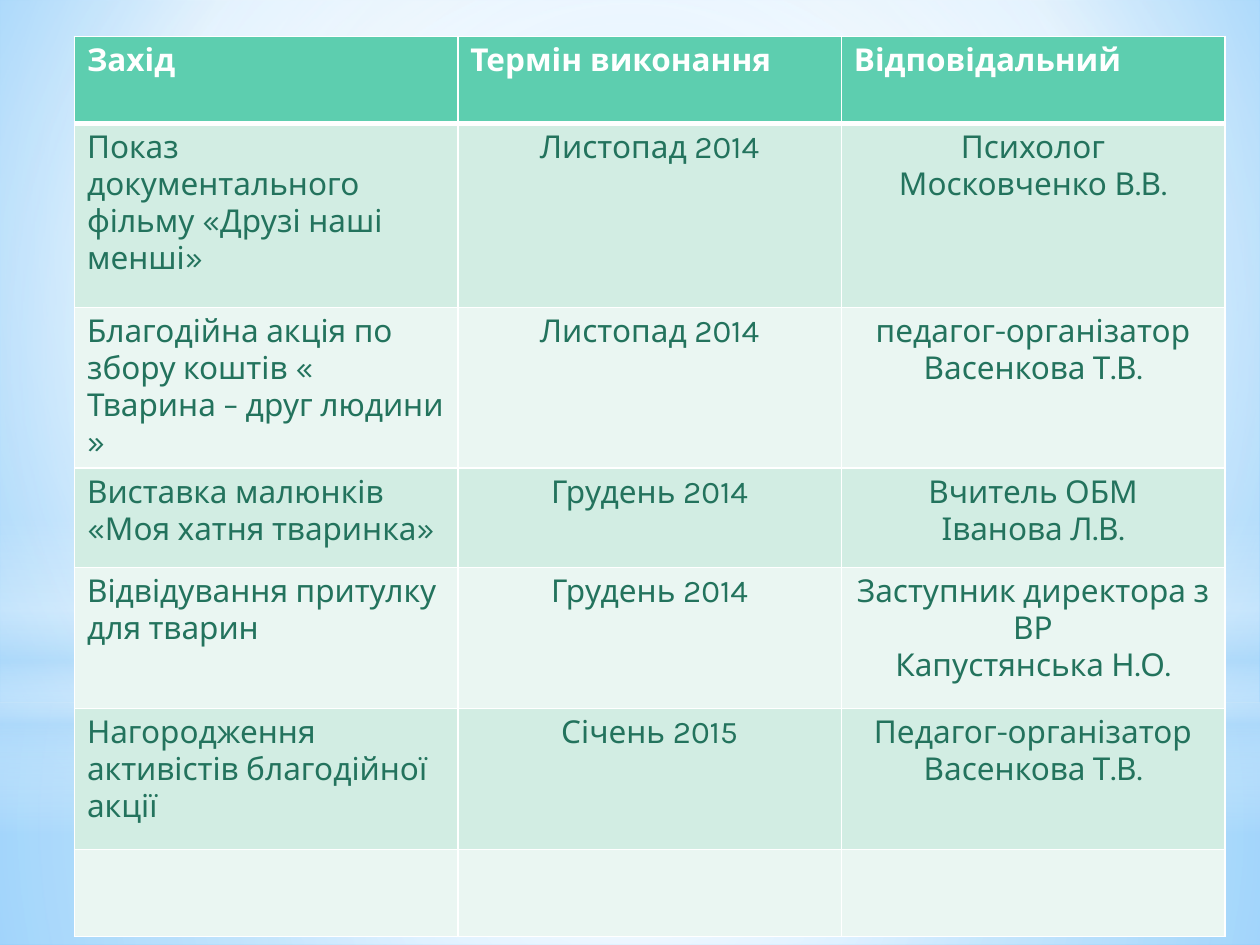
import pptx
from lxml import etree
from pptx.dml.color import RGBColor
from pptx.enum.shapes import MSO_SHAPE
from pptx.enum.text import PP_ALIGN
from pptx.oxml.ns import qn
from pptx.util import Cm, Pt

# Content: each cell is a list of paragraphs
HEADER = ["Захід", "Термін виконання", "Відповідальний"]
EVENTS = [
    (["Показ документального фільму «Друзі наші менші»"], ["Листопад 2014"],
     ["Психолог", "Московченко В.В."]),
    (["Благодійна акція по збору коштів « Тварина – друг людини »"], ["Листопад 2014"],
     ["педагог-організатор", "Васенкова Т.В."]),
    (["Виставка малюнків «Моя хатня тваринка»"], ["Грудень 2014"],
     ["Вчитель ОБМ", "Іванова Л.В."]),
    (["Відвідування притулку для тварин"], ["Грудень 2014"],
     ["Заступник директора з ВР", "Капустянська Н.О."]),
    (["Нагородження активістів благодійної акції"], ["Січень 2015"],
     ["Педагог-організатор", "Васенкова Т.В."]),
    ([], [], []),
]
ROW_HEIGHTS = [1.75, 3.71, 2.84, 2.01, 2.84, 2.84, 1.75]
COL_WIDTH = 7.73
FONT = "Karla"

WHITE = RGBColor(0xFF, 0xFF, 0xFF)
SKY = RGBColor(0xB4, 0xDC, 0xFA)
LIGHT_BLUE = RGBColor(0x9E, 0xD5, 0xFF)
BLUE = RGBColor(0x5B, 0xB9, 0xFF)
GREEN = RGBColor(0x5D, 0xCE, 0xAF)
DARK_GREEN = RGBColor(0x23, 0x73, 0x5D)
BANDS = [RGBColor(0xD2, 0xED, 0xE3), RGBColor(0xEA, 0xF6, 0xF2)]

# Gradients: stops are (position %, colour, opacity %)
CENTRE = (50, 50, 50, 50)
BACKDROP = [(0, LIGHT_BLUE, 100), (60, WHITE, 100), (100, BLUE, 100)]
GLOWS = [  # shape, top, height (cm), stops, focus (None = vertical)
    (MSO_SHAPE.RECTANGLE, 14.17, 4.88,
     [(0, WHITE, 91), (37, WHITE, 76), (100, SKY, 79)], CENTRE),
    (MSO_SHAPE.RECTANGLE, 0, 14.17,
     [(0, WHITE, 89), (48, WHITE, 62), (100, SKY, 79)], CENTRE),
    (MSO_SHAPE.RECTANGLE, 10.46, 6.35,
     [(0, WHITE, 0), (29, WHITE, 30), (45, SKY, 40), (55, WHITE, 26),
      (65, SKY, 60), (100, WHITE, 0)], None),
    (MSO_SHAPE.OVAL, 4.45, 14.17, [(0, WHITE, 100), (56, WHITE, 0)], CENTRE),
]


def add(parent, tag, **attrs):
    return etree.SubElement(parent, qn(tag), {k: str(v) for k, v in attrs.items()})


def add_color(parent, color, opacity=100):
    clr = add(parent, "a:srgbClr", val=color)
    if opacity < 100:
        add(clr, "a:alpha", val=opacity * 1000)


def set_gradient(fill, grad_parent, stops, focus):
    fill.gradient()
    grad = grad_parent.find(qn("a:gradFill"))
    for child in list(grad):
        grad.remove(child)
    gs_list = add(grad, "a:gsLst")
    for pos, color, opacity in stops:
        add_color(add(gs_list, "a:gs", pos=pos * 1000), color, opacity)
    if focus:
        circle = add(grad, "a:path", path="circle")
        add(circle, "a:fillToRect", **{k: v * 1000 for k, v in zip("ltrb", focus)})
    else:
        add(grad, "a:lin", ang=90 * 60000, scaled=0)


def write(tf, paragraphs, color=DARK_GREEN, bold=False, align=PP_ALIGN.LEFT):
    for i, text in enumerate(paragraphs):
        p = tf.paragraphs[0] if i == 0 else tf.add_paragraph()
        p.alignment = align
        r = p.add_run()
        r.text = text
        r.font.name, r.font.size, r.font.bold = FONT, Pt(18), bold
        r.font.color.rgb = color


def set_borders(cell, top=1, bottom=1):
    tc_pr = cell._tc.get_or_add_tcPr()
    sides = [("a:lnL", 1), ("a:lnR", 1), ("a:lnT", top), ("a:lnB", bottom)]
    for i, (tag, width) in enumerate(sides):
        ln = add(tc_pr, tag, w=Pt(width))
        add_color(add(ln, "a:solidFill"), WHITE)
        tc_pr.insert(i, ln)


prs = pptx.Presentation()
prs.slide_width, prs.slide_height = Cm(25.4), Cm(19.05)
s = prs.slides.add_slide(prs.slide_layouts[6])

# Background and light glows
bg_fill = s.background.fill
bg_fill.gradient()
bg_pr = s._element.cSld.find(qn("p:bg")).find(qn("p:bgPr"))
set_gradient(bg_fill, bg_pr, BACKDROP, (20, 10, 20, 60))
for kind, top, height, stops, focus in GLOWS:
    sp = s.shapes.add_shape(kind, 0, Cm(top), prs.slide_width, Cm(height))
    sp.shadow.inherit = False
    sp.line.fill.background()
    set_gradient(sp.fill, sp._element.spPr, stops, focus)

# Table of events
rows = [[[title] for title in HEADER]] + EVENTS
table = s.shapes.add_table(len(rows), len(HEADER), Cm(1.5), Cm(0.74),
                           Cm(COL_WIDTH * len(HEADER)), Cm(sum(ROW_HEIGHTS))).table
for col in table.columns:
    col.width = Cm(COL_WIDTH)
for i, row in enumerate(rows):
    table.rows[i].height = Cm(ROW_HEIGHTS[i])
    for j, paragraphs in enumerate(row):
        cell = table.cell(i, j)
        cell.fill.solid()
        if i == 0:
            cell.fill.fore_color.rgb = GREEN
            write(cell.text_frame, paragraphs, color=WHITE, bold=True)
        else:
            cell.fill.fore_color.rgb = BANDS[(i - 1) % 2]
            write(cell.text_frame, paragraphs,
                  align=PP_ALIGN.CENTER if j else PP_ALIGN.LEFT)
        set_borders(cell, top=3 if i == 1 else 1, bottom=3 if i == 0 else 1)

prs.save("out.pptx")
